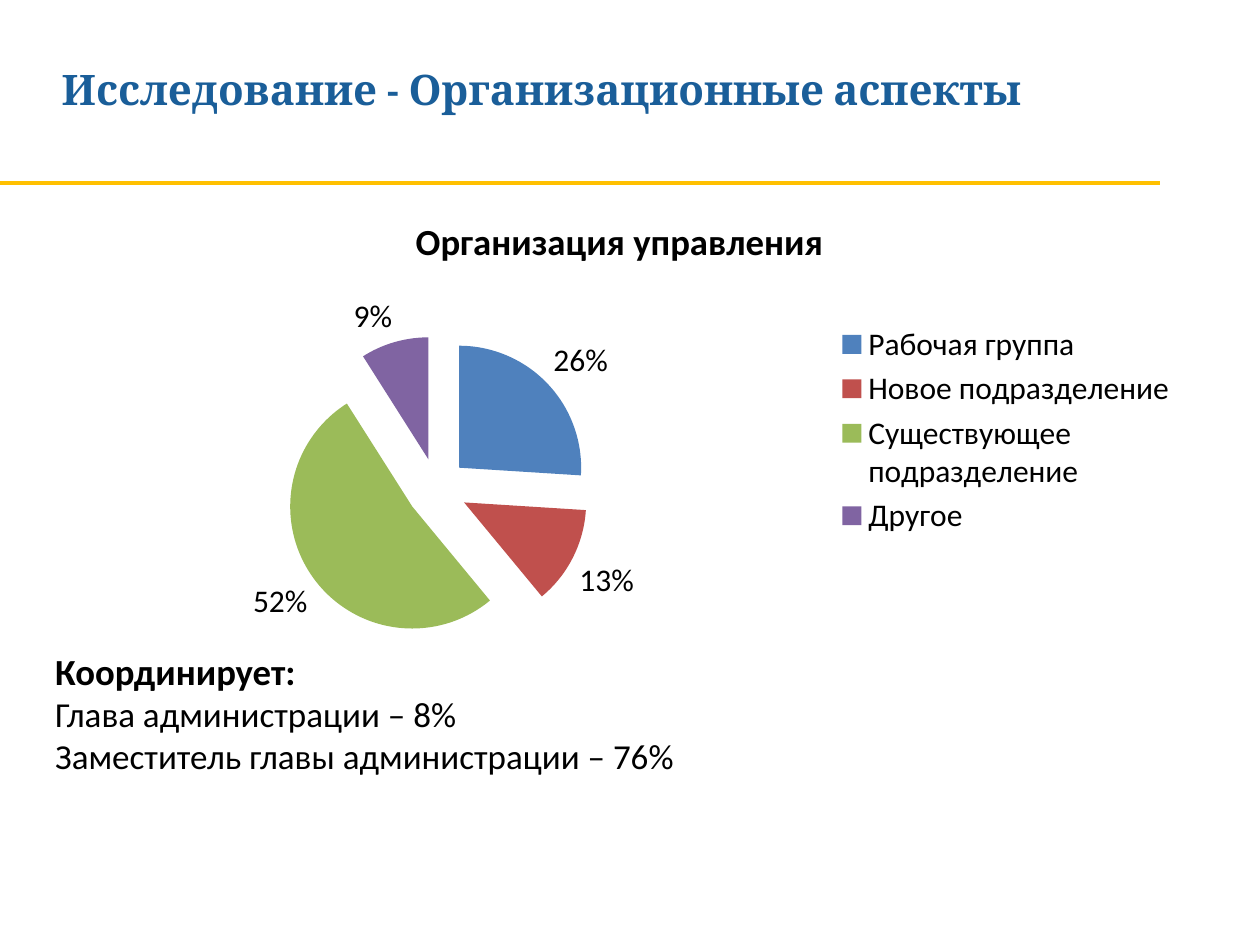
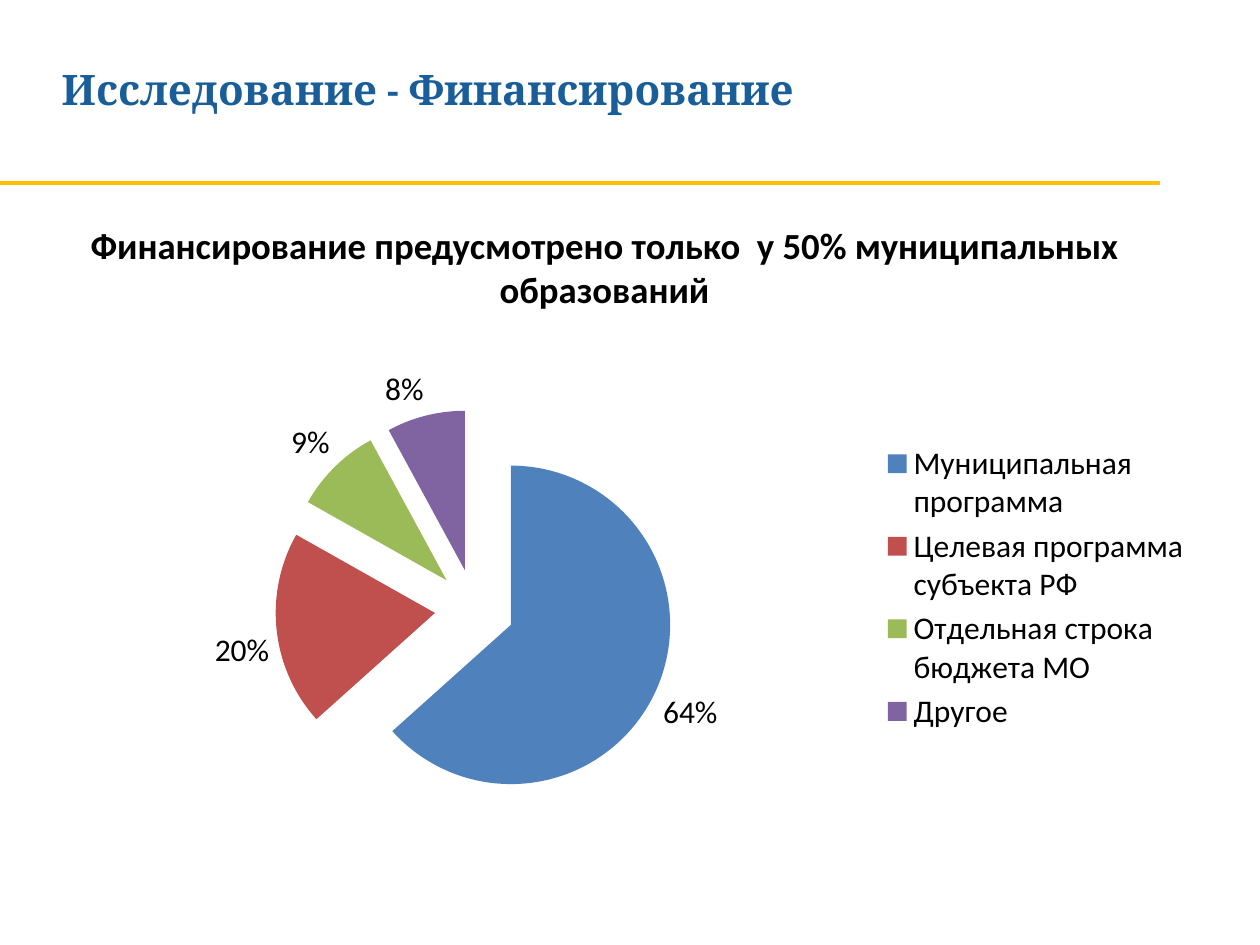
from lxml.etree import SubElement
from pptx import Presentation
from pptx.chart.data import CategoryChartData
from pptx.dml.color import RGBColor
from pptx.enum.chart import XL_CHART_TYPE, XL_LABEL_POSITION, XL_LEGEND_POSITION
from pptx.enum.shapes import MSO_CONNECTOR
from pptx.enum.text import MSO_ANCHOR, MSO_AUTO_SIZE, PP_ALIGN
from pptx.oxml import parse_xml
from pptx.oxml.ns import nsdecls, qn
from pptx.util import Pt

theme = {
    "rule": RGBColor(0xFF, 0xC0, 0x00),
    "slices": [RGBColor.from_string(c) for c in ("4F81BD", "C0504D", "9BBB59", "8064A2")],
    "text": RGBColor(0, 0, 0),
    "heading": {"name": "Cambria", "size": Pt(24), "bold": True,
                "color": RGBColor(0x1A, 0x5E, 0x99)},
    "strong": {"name": "Calibri", "size": Pt(21), "bold": True},
    "body": {"name": "Calibri", "size": Pt(20), "bold": False},
    "chart": {"name": "Calibri", "size": Pt(18), "bold": False},
}


def set_font(font, style):
    font.color.rgb = style.get("color", theme["text"])
    for attribute, value in style.items():
        if attribute != "color":
            setattr(font, attribute, value)


def write(frame, lines, alignment):
    """Fill a text frame with (text, style) paragraphs."""
    frame_format = {"word_wrap": True, "auto_size": MSO_AUTO_SIZE.SHAPE_TO_FIT_TEXT,
                    "vertical_anchor": MSO_ANCHOR.TOP}
    for attribute, value in frame_format.items():
        setattr(frame, attribute, value)
    for index, (text, style) in enumerate(lines):
        paragraph = frame.paragraphs[0] if index == 0 else frame.add_paragraph()
        paragraph.alignment = alignment
        run = paragraph.add_run()
        run.text = text
        set_font(run.font, theme[style])


topics = [
    {
        "heading": "Исследование - Организационные аспекты",
        "series": "Организация управления",
        "chart_title": "Организация управления",
        "shares": {"Рабочая группа": 0.26, "Новое подразделение": 0.13,
                   "Существующее  подразделение": 0.52, "Другое": 0.09},
        "chart_box": (28, 110, 652, 271.5),
        "note": [("Координирует:", "strong"),
                 ("Глава администрации – 8%", "body"),
                 ("Заместитель главы администрации – 76%", "body")],
        "note_box": (24.5, 367, 553.5, 81.5),
        "note_alignment": PP_ALIGN.LEFT,
    },
    {
        "heading": "Исследование - Финансирование",
        "series": "Series 1",
        "chart_title": None,
        "shares": {"Муниципальная программа": 0.64, "Целевая программа субъекта РФ": 0.20,
                   "Отдельная строка бюджета МО": 0.09, "Другое": 0.08},
        "chart_box": (36, 200, 652, 271.5),
        "note": [("Финансирование предусмотрено только  у 50% муниципальных образований",
                  "strong")],
        "note_box": (31, 124, 629, 58),
        "note_alignment": PP_ALIGN.CENTER,
    },
]

deck = Presentation()
deck.slide_width, deck.slide_height = Pt(720), Pt(540)

for topic in topics:
    slide = deck.slides.add_slide(deck.slide_layouts[5])

    # Heading
    heading = slide.shapes.title
    heading_box = {"left": 28, "top": 32.5, "width": 635, "height": 36}
    for attribute, value in heading_box.items():
        setattr(heading, attribute, Pt(value))
    write(heading.text_frame, [(topic["heading"], "heading")], PP_ALIGN.LEFT)

    # Rule under the heading
    rule = slide.shapes.add_connector(MSO_CONNECTOR.STRAIGHT, Pt(0), Pt(104.5), Pt(663), Pt(104.5))
    rule.line.color.rgb = theme["rule"]
    rule.line.width = Pt(2.5)
    SubElement(rule._element.spPr, qn("a:effectLst"))

    # Pie of shares
    shares = CategoryChartData(number_format="0%")
    shares.categories = list(topic["shares"])
    shares.add_series(topic["series"], list(topic["shares"].values()))
    chart = slide.shapes.add_chart(XL_CHART_TYPE.PIE, *map(Pt, topic["chart_box"]), shares).chart
    set_font(chart.font, theme["chart"])
    chart.has_title = topic["chart_title"] is not None
    if chart.has_title:
        chart_heading = chart.chart_title.text_frame.paragraphs[0].add_run()
        chart_heading.text = topic["chart_title"]
        set_font(chart_heading.font, theme["strong"])
    chart.has_legend = True
    chart.legend.position = XL_LEGEND_POSITION.RIGHT
    chart.legend.include_in_layout = False
    set_font(chart.legend.font, theme["chart"])

    # Slices pulled apart, each with its share
    pie = chart.plots[0]
    pie.vary_by_categories = True
    slices = pie.series[0]
    for index, color in enumerate(theme["slices"]):
        fill = slices.points[index].format.fill
        fill.solid()
        fill.fore_color.rgb = color
    slices._element.find(qn("c:dPt")).addprevious(
        parse_xml(f'<c:explosion {nsdecls("c")} val="25"/>'))
    pie.has_data_labels = True
    label_format = {"show_value": True, "show_percentage": False, "number_format": "0%",
                    "number_format_is_linked": False,
                    "position": XL_LABEL_POSITION.OUTSIDE_END}
    for attribute, value in label_format.items():
        setattr(pie.data_labels, attribute, value)
    set_font(pie.data_labels.font, theme["chart"])

    # Note
    note = slide.shapes.add_textbox(*map(Pt, topic["note_box"]))
    write(note.text_frame, topic["note"], topic["note_alignment"])

deck.save("out.pptx")
